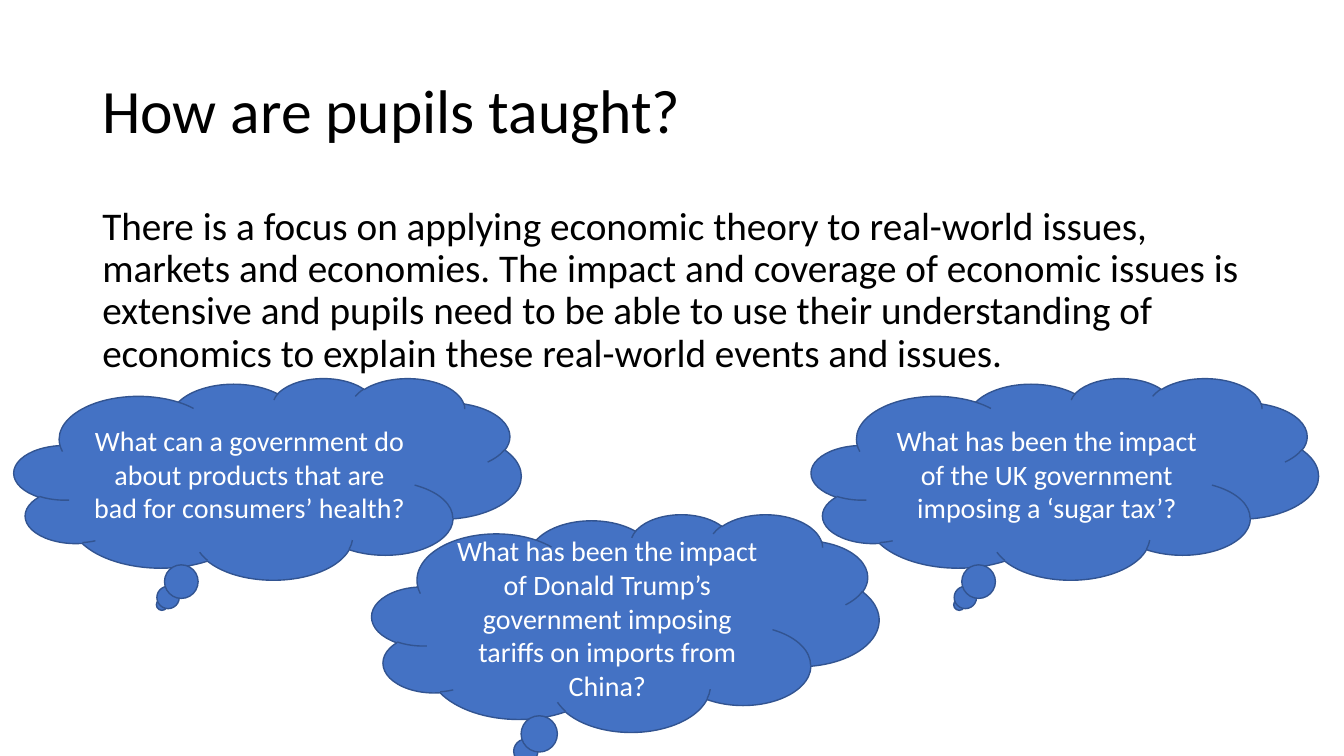
from pptx import Presentation
from pptx.dml.color import RGBColor
from pptx.enum.shapes import MSO_SHAPE
from pptx.enum.text import MSO_ANCHOR as Anchor, PP_ALIGN as Align
from pptx.util import Pt

BLACK = RGBColor(0x00, 0x00, 0x00)
WHITE = RGBColor(0xFF, 0xFF, 0xFF)
CLOUD_BLUE = RGBColor(0x44, 0x72, 0xC4)
OUTLINE_BLUE = RGBColor(0x32, 0x54, 0x91)
FONT = "Calibri"

TITLE = "How are pupils taught?"
BODY = (
    "There is a focus on applying economic theory to real-world issues, "
    "markets and economies. The impact and coverage of economic issues is "
    "extensive and pupils need to be able to use their understanding of "
    "economics to explain these real-world events and issues."
)
CLOUDS = [
    ("What can a government do about products that are bad for consumers’ health?",
     (10.08, 270, 362.16, 144)),
    ("What has been the impact of the UK government imposing a ‘sugar tax’?",
     (579.6, 270, 362.16, 144)),
    ("What has been the impact of Donald Trump’s government imposing "
     "tariffs on imports from China?",
     (265.68, 367.2, 362.16, 155.52)),
]


def write_text(shape, text, size, color, anchor, align):
    frame = shape.text_frame
    frame.word_wrap = True
    frame.vertical_anchor = anchor
    frame.text = text
    paragraph = frame.paragraphs[0]
    paragraph.alignment = align
    font = paragraph.runs[0].font
    font.name = FONT
    font.size = Pt(size)
    font.color.rgb = color
    return paragraph


def add_text_block(slide, box, text, size, anchor, space_before=0):
    shape = slide.shapes.add_textbox(*map(Pt, box))
    paragraph = write_text(shape, text, size, BLACK, anchor, Align.LEFT)
    paragraph.line_spacing = 0.9
    paragraph.space_before = Pt(space_before)


def add_thought_cloud(slide, box, question):
    cloud = slide.shapes.add_shape(MSO_SHAPE.CLOUD_CALLOUT, *map(Pt, box))
    cloud.shadow.inherit = False
    cloud.fill.solid()
    cloud.fill.fore_color.rgb = CLOUD_BLUE
    cloud.line.color.rgb = OUTLINE_BLUE
    cloud.line.width = Pt(1)
    write_text(cloud, question, 20, WHITE, Anchor.MIDDLE, Align.CENTER)


def main():
    presentation = Presentation()
    presentation.slide_width = Pt(960)
    presentation.slide_height = Pt(540)
    slide = presentation.slides.add_slide(presentation.slide_layouts[6])
    add_text_block(slide, (66, 28.75, 828, 104.4), TITLE, 44, Anchor.MIDDLE)
    add_text_block(slide, (66, 143.75, 828, 342.6), BODY, 28, Anchor.TOP, 10)
    for question, box in CLOUDS:
        add_thought_cloud(slide, box, question)
    presentation.save("out.pptx")


if __name__ == "__main__":
    main()
